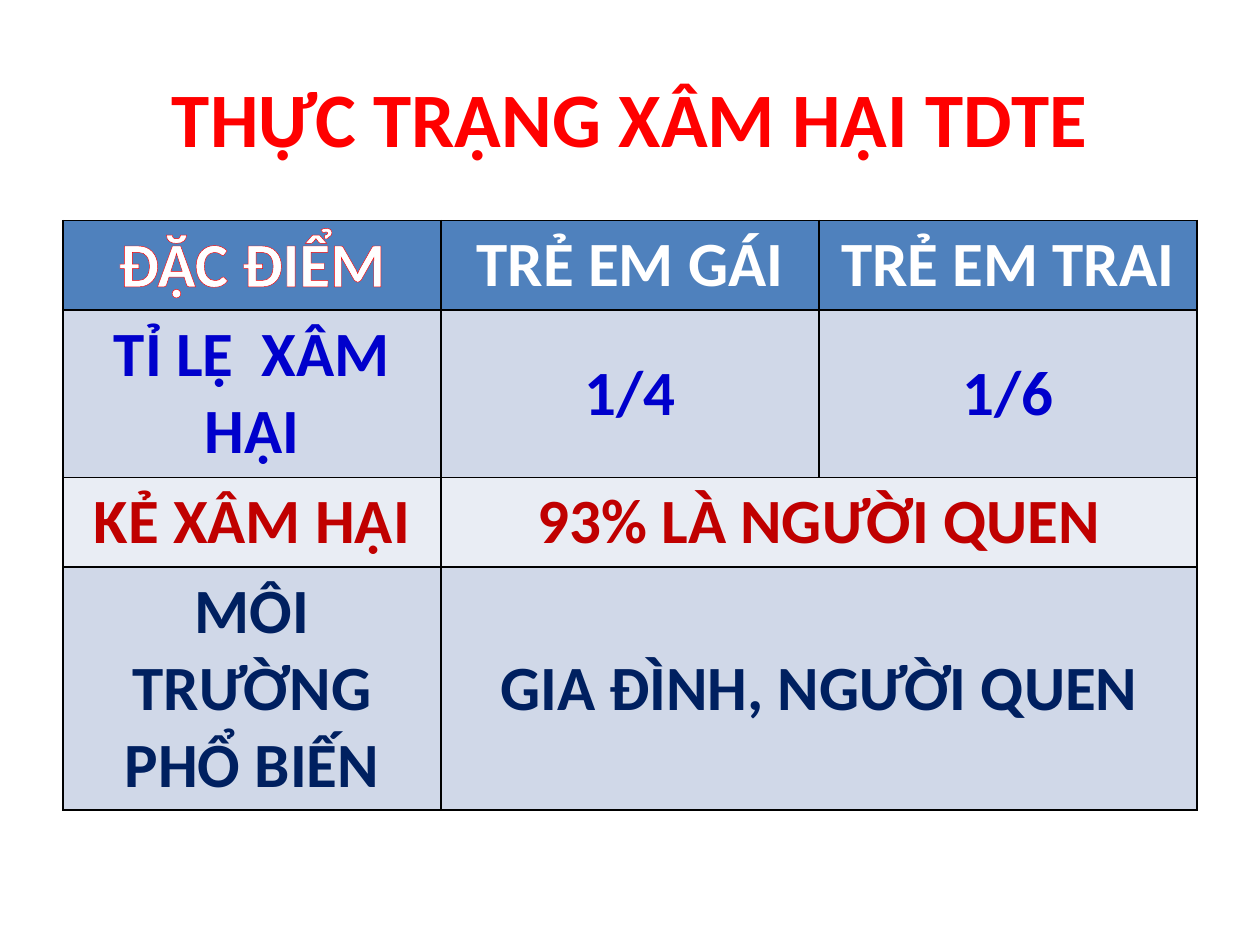
from lxml.etree import SubElement
from pptx import Presentation
from pptx.dml.color import RGBColor
from pptx.enum.text import MSO_ANCHOR, PP_ALIGN
from pptx.oxml import parse_xml
from pptx.oxml.ns import nsdecls, qn
from pptx.util import Inches, Pt

TITLE = "THỰC TRẠNG XÂM HẠI TDTE"
# (height in inches, fill, text colour, cell texts); a short row merges its last cell to the edge
ROWS = [
    (0.71, "4F81BD", "FFFFFF", ["ĐẶC ĐIỂM", "TRẺ EM GÁI", "TRẺ EM TRAI"]),
    (1.33, "D0D8E8", "0000CC", ["TỈ LỆ  XÂM HẠI", "1/4", "1/6"]),
    (0.71, "E9EDF4", "C00000", ["KẺ XÂM HẠI", "93% LÀ NGƯỜI QUEN"]),
    (1.93, "D0D8E8", "002060", ["MÔI TRƯỜNG PHỔ BIẾN", "GIA ĐÌNH, NGƯỜI QUEN"]),
]
COLUMNS = 3
MARGIN, TITLE_TOP, TITLE_HEIGHT, TABLE_TOP = 0.5, 0.3, 1.25, 1.75


def rgb(color):
    return RGBColor.from_string(color)


def write(frame, text, size, color):
    paragraph = frame.paragraphs[0]
    paragraph.text = text
    paragraph.alignment = PP_ALIGN.CENTER
    font = paragraph.font
    font.name, font.size, font.bold = "Calibri", Pt(size), True
    font.color.rgb = rgb(color)


def line_xml(tag, points, color):
    return parse_xml(
        f'<a:{tag} {nsdecls("a")} w="{Pt(points)}"><a:solidFill>'
        f'<a:srgbClr val="{color}"/></a:solidFill></a:{tag}>')


def add_borders(cell):
    properties = cell._tc.get_or_add_tcPr()
    for index, side in enumerate(("lnL", "lnR", "lnT", "lnB")):
        properties.insert(index, line_xml(side, 1, "000000"))


def outline_text(run, points, color):
    run._r.get_or_add_rPr().insert(0, line_xml("ln", points, color))


deck = Presentation()
deck.slide_width, deck.slide_height = Inches(10), Inches(7.5)
slide = deck.slides.add_slide(deck.slide_layouts[6])
width = deck.slide_width - 2 * Inches(MARGIN)

title = slide.shapes.add_textbox(
    Inches(MARGIN), Inches(TITLE_TOP), width, Inches(TITLE_HEIGHT)).text_frame
title.word_wrap = True
title.vertical_anchor = MSO_ANCHOR.MIDDLE
write(title, TITLE, 44, "FF0000")

table = slide.shapes.add_table(
    len(ROWS), COLUMNS, Inches(MARGIN), Inches(TABLE_TOP), width,
    Inches(sum(row[0] for row in ROWS))).table

for r, (height, fill, color, texts) in enumerate(ROWS):
    table.rows[r].height = Inches(height)
    for c in range(COLUMNS):
        cell = table.cell(r, c)
        cell.fill.solid()
        cell.fill.fore_color.rgb = rgb(fill)
        cell.vertical_anchor = MSO_ANCHOR.MIDDLE
        add_borders(cell)
        if c < len(texts):
            write(cell.text_frame, texts[c], 36, color)
    if len(texts) < COLUMNS:
        table.cell(r, len(texts) - 1).merge(table.cell(r, COLUMNS - 1))

outline_text(table.cell(0, 0).text_frame.paragraphs[0].runs[0], 0.75, "FF0000")

deck.save("out.pptx")
